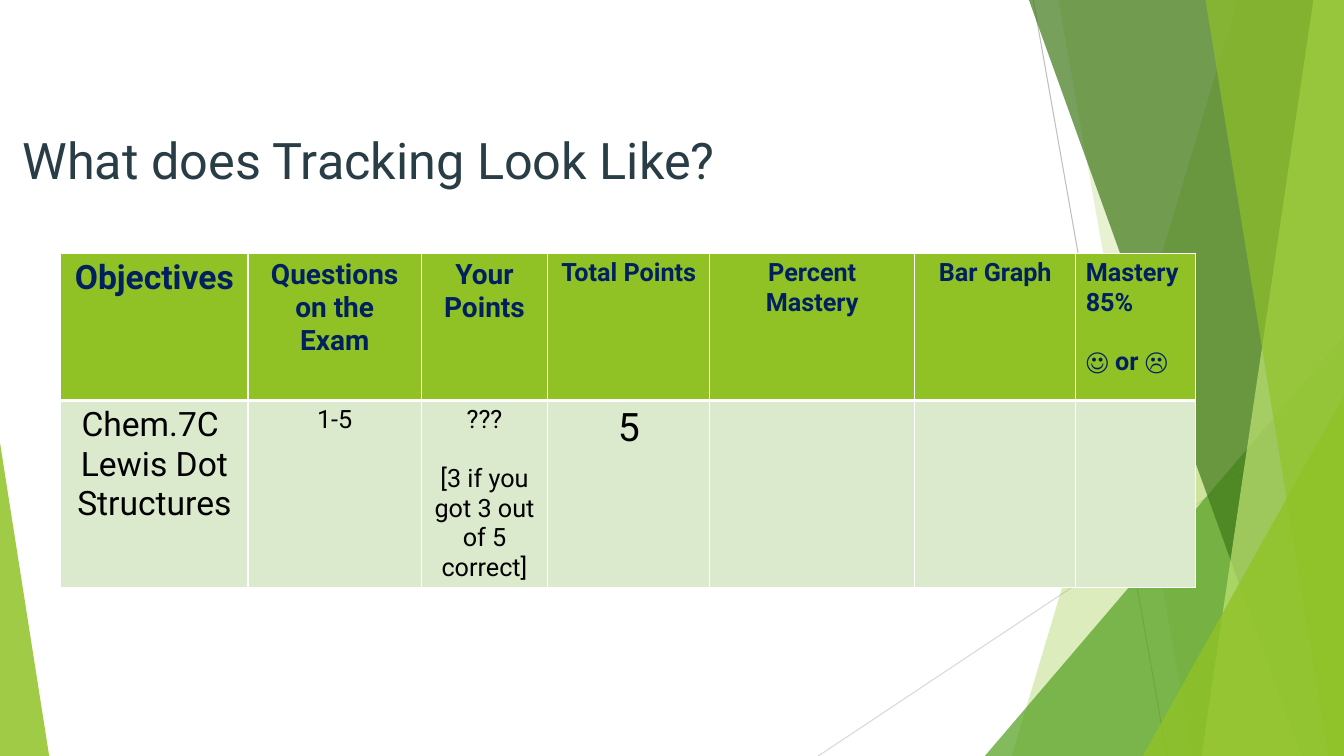
from lxml import etree
from pptx import Presentation, util as u
from pptx.dml.color import RGBColor
from pptx.enum import shapes, text
from pptx.oxml.ns import qn

TITLE = "What does Tracking Look Like?"
TITLE_BOX = (0, 3.12, 18.59, 3.78)

HEADERS = [
    (["Objectives"], "large"),
    (["Questions on the Exam"], "medium"),
    (["Your Points"], "medium"),
    (["Total Points"], "small"),
    (["Percent Mastery"], "small"),
    (["Bar Graph"], "small"),
    (["Mastery", "85%", "☺ or ☹"], "small"),
]
TRACKING = [
    (["Chem.7C ", "Lewis Dot Structures"], "large"),
    (["1-5"], "small"),
    (["???", "[3 if you got 3 out of 5 correct]"], "small"),
    (["5"], "score"),
    ([], "small"),
    ([], "small"),
    ([], "small"),
]
GAP_BEFORE = {"☺ or ☹", "[3 if you got 3 out of 5 correct]"}
TABLE_AT = (1.53, 6.38)
COLUMNS = [4.72, 4.37, 3.18, 4.09, 5.16, 4.06, 3.02]
ROWS = [3.71, 4.72]

WIDTH, HEIGHT = 33.87, 19.05
RAYS = [
    ((26.04, 0), (29.41, HEIGHT), "ray_dark"),
    ((WIDTH, 10.24), (20.62, HEIGHT), "ray_light"),
]
FACETS = [
    ("band", (31.19, 25.5), "green", 30),
    ("band", (26.67, 30.05), "green", 20),
    ("wedge", (24.82, 8.46, WIDTH, 1), "forest", 72),
    ("band", (25.93, 32.79), "moss", 70),
    ("band", (33.1, 30.28), "lime", 70),
    ("band", (30.38, 33.48), "green", 65),
    ("wedge", (28.8, 9.98, WIDTH, 1), "green", 80),
    ("wedge", (0, 11.15, 1.24, 0), "green", 85),
]

THEME = {
    "font": "Roboto",
    "sizes": {"title": 36, "score": 28, "large": 24, "medium": 20, "small": 18},
    "colors": {
        "title": "293D46", "header": "002060", "body": "000000",
        "green": "90C226", "forest": "54A021", "moss": "3F7819",
        "lime": "C0E474", "pale": "DBE9CD", "border": "FFFFFF",
        "ray_dark": "BFBFBF", "ray_light": "D9D9D9",
    },
}


def color(name):
    return RGBColor.from_string(THEME["colors"][name])


def apply(obj, values):
    for name, value in values.items():
        setattr(obj, name, value)


def style_run(r, size, ink, bold=False):
    apply(r.font, {"name": THEME["font"], "size": u.Pt(THEME["sizes"][size]), "bold": bold})
    r.font.color.rgb = color(ink)


def add_ray(s, start, end, ink):
    ray = s.shapes.add_connector(
        shapes.MSO_CONNECTOR.STRAIGHT, *(u.Cm(v) for v in start + end))
    ray.line.color.rgb = color(ink)
    ray.line.width = u.Pt(0.75)
    etree.SubElement(ray._element.spPr, qn("a:effectLst"))


def add_band(s, top_x, bottom_x):
    corners = [(WIDTH, 0), (WIDTH, HEIGHT), (bottom_x, HEIGHT)]
    outline = s.shapes.build_freeform(u.Cm(top_x), 0)
    outline.add_line_segments([(u.Cm(x), u.Cm(y)) for x, y in corners])
    return outline.convert_to_shape()


def add_wedge(s, left, top, right, apex):
    sp = s.shapes.add_shape(
        shapes.MSO_SHAPE.ISOSCELES_TRIANGLE,
        u.Cm(left), u.Cm(top), u.Cm(right - left), u.Cm(HEIGHT - top))
    sp.adjustments[0] = apex
    return sp


def add_facet(s, kind, geometry, ink, opacity):
    sp = {"band": add_band, "wedge": add_wedge}[kind](s, *geometry)
    sp.shadow.inherit = False
    sp.line.fill.background()
    sp.fill.solid()
    sp.fill.fore_color.rgb = color(ink)
    tint = sp._element.spPr.find(qn("a:solidFill"))[0]
    etree.SubElement(tint, qn("a:alpha"), val=str(opacity * 1000))


def add_borders(cell, widths):
    tc_pr = cell._tc.get_or_add_tcPr()
    for side, width in widths.items():
        ln = etree.SubElement(tc_pr, qn(f"a:ln{side}"), w=str(u.Pt(width)))
        fill = etree.SubElement(ln, qn("a:solidFill"))
        etree.SubElement(fill, qn("a:srgbClr"), val=THEME["colors"]["border"])


def fill_cell(cell, lines, size, align, ink, bold):
    for i, line in enumerate(lines):
        tf = cell.text_frame
        p = tf.add_paragraph() if i else tf.paragraphs[0]
        p.alignment = align
        if line in GAP_BEFORE:
            p.space_before = u.Pt(21)
        r = p.add_run()
        r.text = line
        style_run(r, size, ink, bold)


def add_tracking_table(s):
    frame = s.shapes.add_table(
        len(ROWS), len(COLUMNS), *(u.Cm(v) for v in TABLE_AT),
        u.Cm(sum(COLUMNS)), u.Cm(sum(ROWS)))
    table = frame.table
    table.horz_banding = False
    for column, width in zip(table.columns, COLUMNS):
        column.width = u.Cm(width)
    row_styles = [
        (HEADERS, "green", "header", True, {"L": 1, "R": 1, "T": 1, "B": 3}),
        (TRACKING, "pale", "body", False, {"L": 1, "R": 1, "T": 3, "B": 1}),
    ]
    for y, (cells, background, ink, bold, borders) in enumerate(row_styles):
        table.rows[y].height = u.Cm(ROWS[y])
        for x, (lines, size) in enumerate(cells):
            cell = table.cell(y, x)
            add_borders(cell, borders)
            cell.fill.solid()
            cell.fill.fore_color.rgb = color(background)
            last = x == len(COLUMNS) - 1
            align = text.PP_ALIGN.LEFT if last else text.PP_ALIGN.CENTER
            fill_cell(cell, lines, size, align, ink, bold)


def add_title(s):
    title = s.shapes.title
    apply(title, dict(zip(("left", "top", "width", "height"), map(u.Cm, TITLE_BOX))))
    tf = title.text_frame
    apply(tf, {
        "word_wrap": True,
        "auto_size": text.MSO_AUTO_SIZE.NONE,
        "vertical_anchor": text.MSO_ANCHOR.TOP,
    })
    p = tf.paragraphs[0]
    p.alignment = text.PP_ALIGN.CENTER
    r = p.add_run()
    r.text = TITLE
    style_run(r, "title", "title")


def main():
    prs = Presentation()
    apply(prs, {"slide_width": u.Cm(WIDTH), "slide_height": u.Cm(HEIGHT)})
    s = prs.slides.add_slide(prs.slide_layouts[5])
    for ray in RAYS:
        add_ray(s, *ray)
    for facet in FACETS:
        add_facet(s, *facet)
    add_title(s)
    add_tracking_table(s)
    prs.save("out.pptx")


if __name__ == "__main__":
    main()
